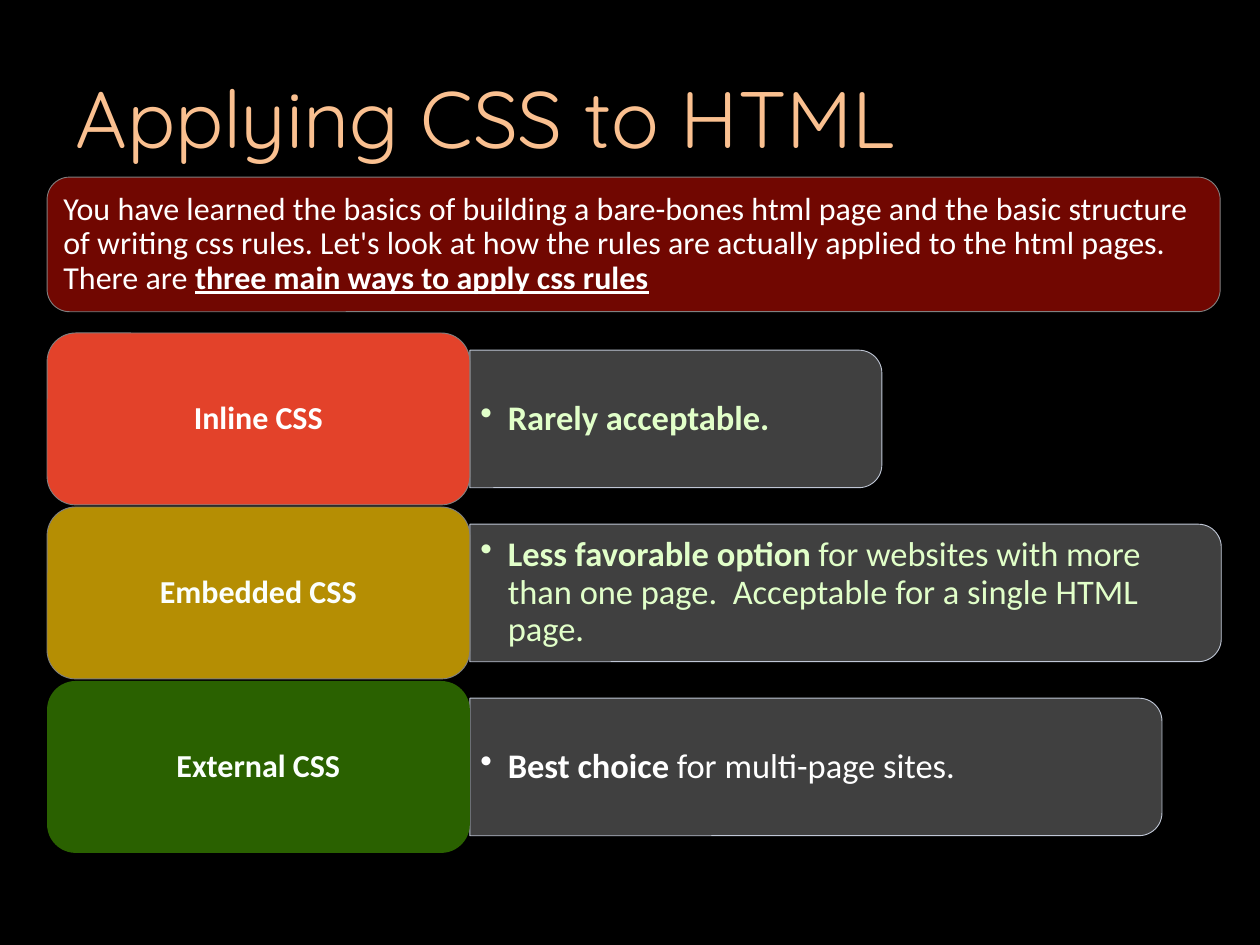
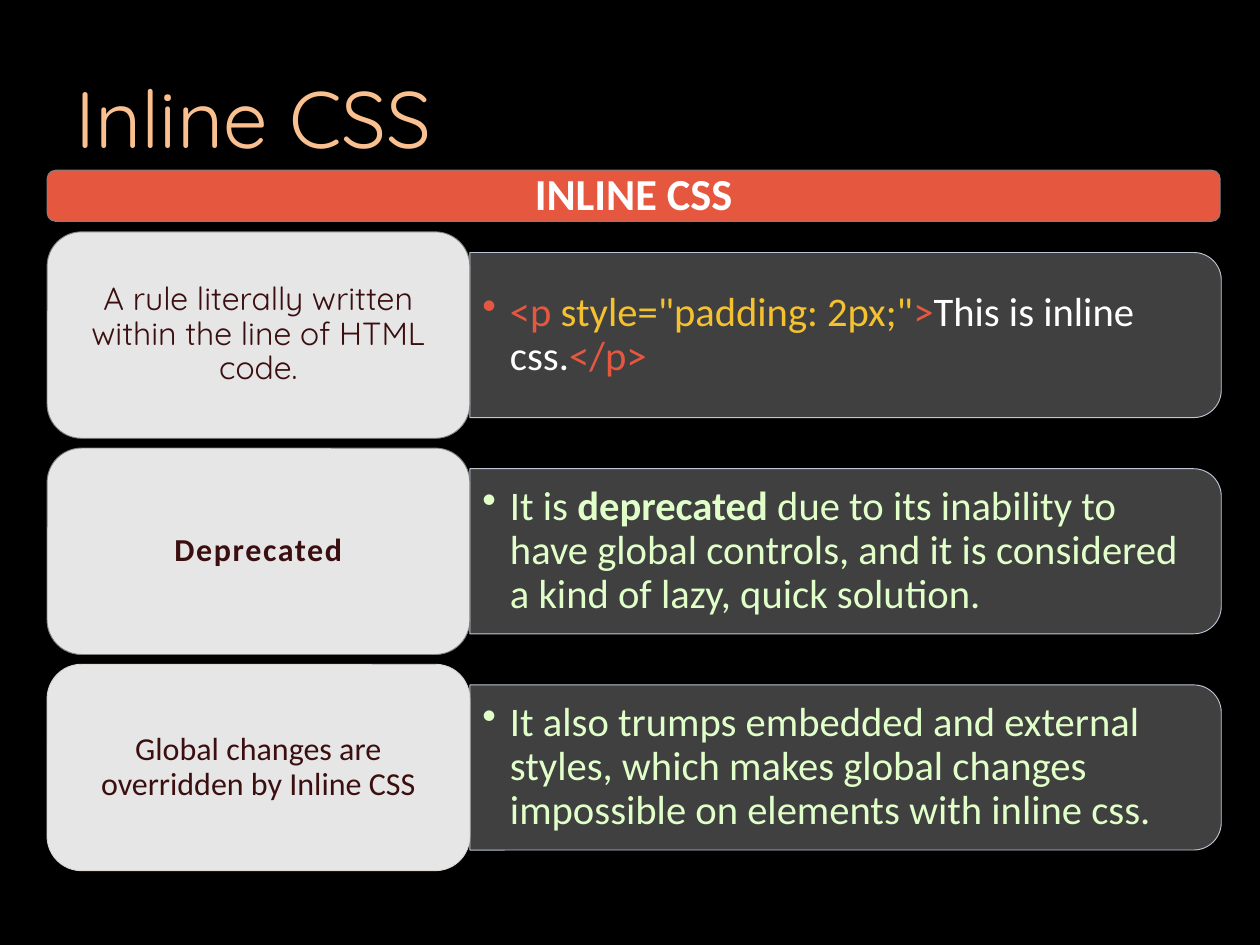
"""Builds two slides on applying CSS to HTML."""
import pptx
import pptx.dml.color
import pptx.enum.shapes
import pptx.enum.text
import pptx.oxml.ns
import pptx.util
from lxml import etree

Cm = pptx.util.Cm
Pt = pptx.util.Pt
RGBColor = pptx.dml.color.RGBColor
MSO_SHAPE = pptx.enum.shapes.MSO_SHAPE
PP_ALIGN = pptx.enum.text.PP_ALIGN
qn = pptx.oxml.ns.qn

BLACK = RGBColor(0x00, 0x00, 0x00)
WHITE = RGBColor(0xFF, 0xFF, 0xFF)
OFF_WHITE = RGBColor(0xFB, 0xFF, 0xFC)
PEACH = RGBColor(0xFA, 0xC0, 0x90)
MAROON = RGBColor(0x71, 0x07, 0x01)
RED = RGBColor(0xE3, 0x42, 0x2A)
CORAL = RGBColor(0xE6, 0x57, 0x40)
MUSTARD = RGBColor(0xB5, 0x8E, 0x03)
YELLOW = RGBColor(0xF5, 0xC1, 0x2E)
GREEN = RGBColor(0x2A, 0x61, 0x00)
PALE_GREEN = RGBColor(0xE1, 0xFF, 0xC9)
CHARCOAL = RGBColor(0x40, 0x40, 0x40)
GREY = RGBColor(0x80, 0x80, 0x80)
LIGHT_GREY = RGBColor(0xE6, 0xE6, 0xE6)
WARM_GREY = RGBColor(0xDD, 0xD5, 0xD0)
BLUE_GREY = RGBColor(0xD0, 0xD8, 0xE8)
DARK_BROWN = RGBColor(0x3B, 0x0F, 0x10)

TITLE = {"name": "Quicksand", "size": Pt(65), "color": PEACH}
BODY = {"name": "Calibri", "size": Pt(26), "color": WHITE}
BOLD = {"bold": True}


class Deck:
    """Holds the shared style and the current slide."""

    left = 1.35
    full_width = 33.63
    label_width = 12.12
    panel_ratio = 0.8
    bullet_indent = 0.79

    def __init__(self):
        self.presentation = pptx.Presentation()
        self.presentation.slide_width = Cm(36.12)
        self.presentation.slide_height = Cm(27.1)
        self.slide = None

    def new_slide(self, title):
        layout = self.presentation.slide_layouts[6]
        self.slide = self.presentation.slides.add_slide(layout)
        background = self.slide.background.fill
        background.solid()
        background.fore_color.rgb = BLACK
        shape = self.text_box(1.8, 1.09, 32.51, 4.52)
        self.set_text(shape, [(title, {})], TITLE, (0.36, 0.18), spacing=1.0)

    def text_box(self, left, top, width, height):
        return self.slide.shapes.add_textbox(Cm(left), Cm(top), Cm(width), Cm(height))

    def shape(self, kind, left, top, width, height, fill, line):
        shape = self.slide.shapes.add_shape(kind, Cm(left), Cm(top), Cm(width), Cm(height))
        shape.shadow.inherit = False
        shape.fill.solid()
        shape.fill.fore_color.rgb = fill
        if line is None:
            shape.line.fill.background()
        else:
            shape.line.color.rgb = line
            shape.line.width = Pt(0.75)
        return shape

    def set_text(self, shape, runs, base, insets, align=PP_ALIGN.LEFT, spacing=0.9):
        across, down = insets
        frame = shape.text_frame
        frame_format = {
            "word_wrap": True,
            "vertical_anchor": pptx.enum.text.MSO_ANCHOR.MIDDLE,
            "margin_left": Cm(across),
            "margin_right": Cm(across),
            "margin_top": Cm(down),
            "margin_bottom": Cm(down),
        }
        for name, value in frame_format.items():
            setattr(frame, name, value)
        paragraph = frame.paragraphs[0]
        paragraph.alignment = align
        paragraph.line_spacing = spacing
        for text, changes in runs:
            run = paragraph.add_run()
            run.text = text
            for name, value in {**base, **changes}.items():
                if name == "color":
                    run.font.color.rgb = value
                elif name == "tracking":
                    run._r.get_or_add_rPr().set("spc", str(value))
                else:
                    setattr(run.font, name, value)
        return paragraph

    def box(self, left, top, width, height, fill, line, runs, base=BODY,
            insets=(0.28, 0.13), align=PP_ALIGN.CENTER):
        shape = self.shape(MSO_SHAPE.ROUNDED_RECTANGLE, left, top, width, height, fill, line)
        self.set_text(shape, runs, base, insets, align)

    def banner(self, top, height, fill, runs, **options):
        self.box(self.left, top, self.full_width, height, fill, GREY, runs, **options)

    def panel(self, top, width, height, runs, base, insets):
        left = self.left + self.label_width
        shift = (width - height) / 2
        shape = self.shape(MSO_SHAPE.ROUND_2_SAME_RECTANGLE, left + shift, top - shift,
                           height, width, CHARCOAL, BLUE_GREY)
        shape.rotation = 90
        line_color = shape.element.xpath(".//a:ln//a:srgbClr")[0]
        etree.SubElement(line_color, qn("a:alpha"), val="90000")
        text_box = self.text_box(left, top, width - 0.2, height)
        paragraph = self.set_text(text_box, runs, base, insets)
        properties = paragraph._p.get_or_add_pPr()
        properties.set("marL", str(Cm(self.bullet_indent)))
        properties.set("indent", str(-Cm(self.bullet_indent)))
        etree.SubElement(properties, qn("a:buChar"), char="•")

    def rows(self, top, pitch, height, rows, panel_base, panel_insets):
        panel_height = height * self.panel_ratio
        for index, (fill, line, label, label_format, panel_width, runs) in enumerate(rows):
            row_top = top + index * pitch
            self.panel(row_top + (height - panel_height) / 2, panel_width, panel_height,
                       runs, panel_base, panel_insets)
            self.box(self.left, row_top, self.label_width, height, fill, line,
                     [(label, label_format)])


def main():
    deck = Deck()
    wide = 21.54

    deck.new_slide("Applying CSS to HTML")
    deck.banner(5.08, 3.86, MAROON, [
        ("You have learned the basics of building a bare-bones html page and the basic "
         "structure of writing css rules. Let's look at how the rules are actually applied "
         "to the html pages. There are ", {}),
        ("three main ways to apply css rules", {"bold": True, "underline": True}),
    ], align=PP_ALIGN.LEFT)
    off_white_bold = {"bold": True, "color": OFF_WHITE}
    white = {"color": WHITE}
    deck.rows(9.55, 4.99, 4.93, [
        (RED, GREY, "Inline CSS", BOLD, 11.81, [("Rarely acceptable.", BOLD)]),
        (MUSTARD, GREY, "Embedded CSS", off_white_bold, wide, [
            ("Less favorable option ", BOLD),
            ("for websites with more than one page.  Acceptable for a single HTML page.", {}),
        ]),
        (GREEN, None, "External CSS", off_white_bold, 19.84, [
            ("Best choice ", {**BOLD, **white}),
            ("for multi-page sites.", white),
        ]),
    ], {**BODY, "size": Pt(28), "color": PALE_GREEN}, (0.3, 0.15))

    deck.new_slide("Inline CSS")
    deck.banner(4.88, 1.47, CORAL, [("INLINE CSS", BOLD)],
                base={**BODY, "size": Pt(36)}, insets=(0.38, 0.18))
    brown = {"color": DARK_BROWN}
    tag = {"color": CORAL}
    deck.rows(6.65, 6.2, 5.92, [
        (LIGHT_GREY, GREY, "A rule literally written within the line of HTML code.",
         {**brown, "name": "Quicksand"}, wide, [
             ("<p ", tag),
             ('style="padding: 2px;"', {"color": YELLOW}),
             (">", tag),
             ("This is inline css.", white),
             ("</p>", tag),
         ]),
        (LIGHT_GREY, GREY, "Deprecated", {**brown, **BOLD, "tracking": 130}, wide, [
            ("It is ", {}),
            ("deprecated", BOLD),
            (" due to its inability to have global controls, and it is considered a kind "
             "of lazy, quick solution.", {}),
        ]),
        (LIGHT_GREY, WARM_GREY, "Global changes are overridden by Inline CSS", brown, wide, [
            ("It also trumps embedded and external styles, which makes global changes "
             "impossible on elements with inline css.", {}),
        ]),
    ], {**BODY, "size": Pt(33), "color": PALE_GREEN}, (0.36, 0.18))

    deck.presentation.save("out.pptx")


if __name__ == "__main__":
    main()
